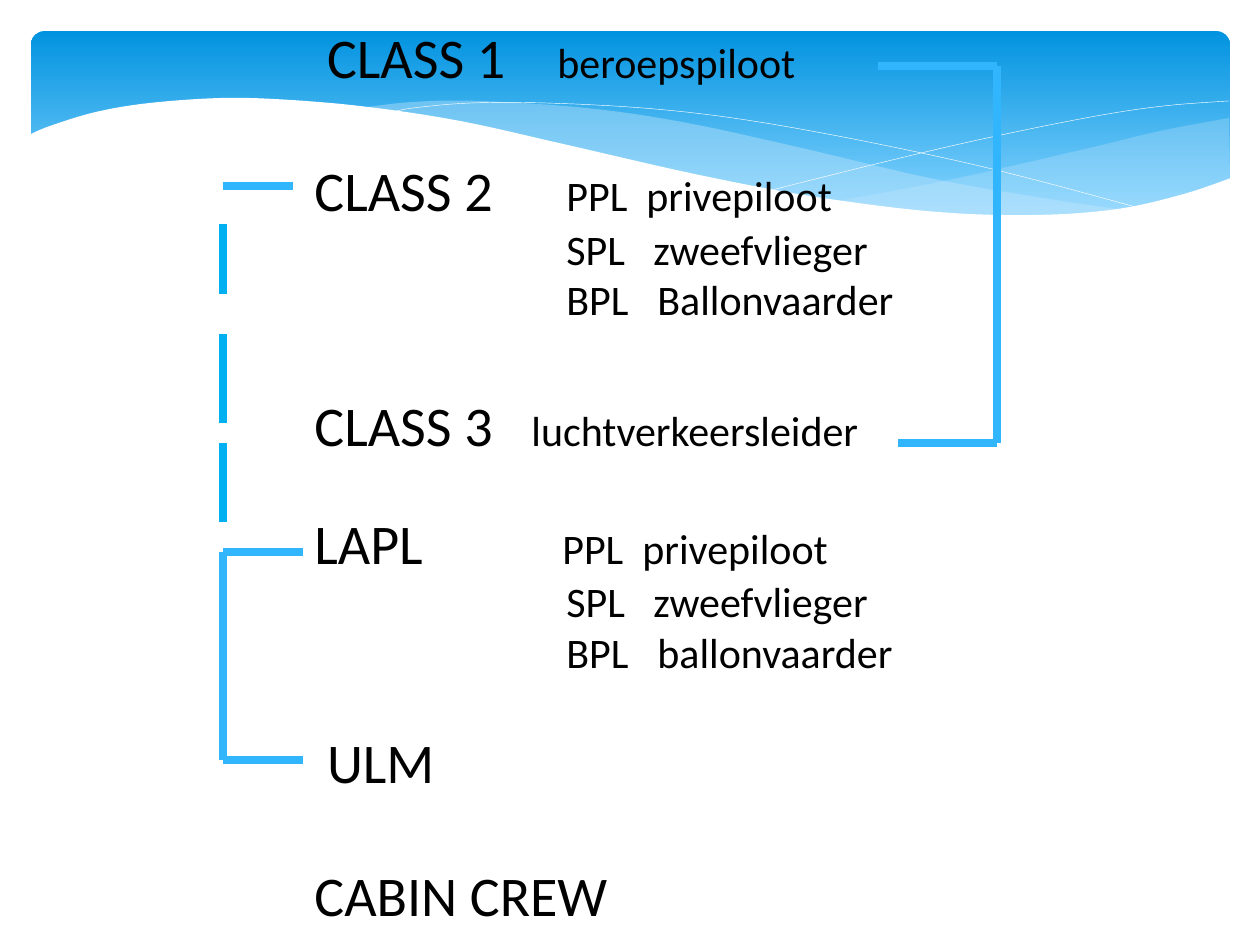
"""Build the slide that groups pilot licences by medical class."""
from dataclasses import dataclass
from typing import Any

from lxml.etree import SubElement
from pptx import Presentation
from pptx.dml.color import RGBColor
from pptx.enum.shapes import MSO_CONNECTOR as Connector, MSO_SHAPE as Shape
from pptx.enum.text import MSO_ANCHOR as Anchor
from pptx.oxml.ns import qn
from pptx.util import Emu, Pt

BLACK = RGBColor(0x00, 0x00, 0x00)
WHITE = RGBColor(0xFF, 0xFF, 0xFF)
DEEP_BLUE = RGBColor(0x02, 0x93, 0xE0)
LIGHT_BLUE = RGBColor(0x83, 0xD3, 0xFE)
PALE_BLUE = RGBColor(0xC6, 0xE7, 0xFC)
BRACKET_BLUE = RGBColor(0x31, 0xB6, 0xFD)
DASH_BLUE = RGBColor(0x00, 0xB0, 0xF0)

RIGHT_WAVE = [
    [(1229, 118), (1160, 131), (1085, 149), (949, 180), (833, 202)],
    [(833, 202), (922, 212), (998, 217), (1063, 215), (1130, 208), (1187, 194), (1230, 178)],
]
MIDDLE_WAVE = [
    [(1125, 210), (1055, 200), (934, 179), (793, 146), (682, 122), (586, 108),
     (479, 101), (413, 102), (360, 108)],
    [(360, 108), (456, 122), (566, 146), (713, 180), (819, 199), (910, 212),
     (1003, 218), (1068, 217), (1125, 210)],
]
FALLING_CURVE = [[(389, 113), (413, 108), (471, 103), (546, 103), (643, 108), (733, 118),
                  (838, 136), (958, 161), (1047, 183), (1143, 209)]]
RISING_CURVE = [[(772, 190), (876, 164), (978, 140), (1091, 117), (1164, 106), (1229, 101)]]
WHITE_WAVE = [
    [(1231, 178), (1184, 194), (1118, 209), (1037, 215), (937, 212), (816, 197),
     (699, 175), (563, 144), (460, 121), (368, 107), (290, 100), (223, 98),
     (150, 103), (96, 112), (50, 126), (29, 135)],
    [(29, 135), (29, 282)],
    [(29, 282), (1231, 282)],
]

LICENCE_ROWS = [
    (0, " CLASS 1", [(243, "beroepspiloot")]),
    (32, "CLASS 2", [(252, "PPL"), (332, "privepiloot")]),
    (0, "", [(252, "SPL"), (339, "zweefvlieger")]),
    (0, "", [(252, "BPL"), (343, "Ballonvaarder")]),
    (32, "CLASS 3", [(217, "luchtverkeersleider")]),
    (24, "LAPL", [(248, "PPL"), (328, "privepiloot")]),
    (0, "", [(252, "SPL"), (339, "zweefvlieger")]),
    (0, "", [(252, "BPL"), (343, "ballonvaarder")]),
    (24, " ULM", []),
    (32, "CABIN CREW", []),
]

BRACKET_LINES = [
    (997, 66, 997, 443), (997, 66, 878, 66), (997, 443, 898, 443),
    (223, 186, 293, 186), (223, 552, 303, 552), (223, 760, 303, 760),
    (223, 552, 223, 760),
]
DASHES = [(224, 294), (334, 423), (443, 522)]


def px(length):
    """Turn pixels into EMU."""
    return Emu(round(length * 914400 / 126))


def smooth(knots, steps=6):
    """Return points on a Catmull-Rom curve through the knots."""
    padded = [knots[0], *knots, knots[-1]]
    points = [knots[0]]
    for a, b, c, d in zip(padded, padded[1:], padded[2:], padded[3:]):
        for step in range(1, steps + 1):
            t = step / steps
            points.append(tuple(
                (2 * q + (r - p) * t + (2 * p - 5 * q + 4 * r - s) * t ** 2
                 + (3 * q - p - 3 * r + s) * t ** 3) / 2
                for p, q, r, s in zip(a, b, c, d)))
    return points


@dataclass
class SlideBuilder:
    """Holds the style and the current slide."""
    slide: Any
    font: str = "Calibri"
    heading_size: int = 32
    detail_size: int = 24
    line_spacing: float = 1.2
    line_width: float = 4.5

    def banner(self, left, top, width, height):
        """Add the rounded gradient banner."""
        shape = self.slide.shapes.add_shape(
            Shape.ROUNDED_RECTANGLE, px(left), px(top), px(width), px(height))
        shape.adjustments[0] = 0.07
        shape.shadow.inherit = False
        shape.line.fill.background()
        shape.fill.gradient()
        shape.fill.gradient_angle = 270
        stops = zip(shape.fill.gradient_stops, (0, 0.9), (DEEP_BLUE, LIGHT_BLUE))
        for stop, position, color in stops:
            stop.position = position
            stop.color.rgb = color

    def outline(self, edges, closed):
        """Add a freeform that runs smoothly along each edge."""
        points = [(px(x), px(y)) for edge in edges for x, y in smooth(edge)]
        builder = self.slide.shapes.build_freeform(*points[0])
        builder.add_line_segments(points[1:], close=closed)
        shape = builder.convert_to_shape()
        shape.shadow.inherit = False
        return shape

    def wave(self, edges, color, opacity=100):
        """Add a filled wave."""
        shape = self.outline(edges, True)
        shape.line.fill.background()
        shape.fill.solid()
        shape.fill.fore_color.rgb = color
        if opacity < 100:
            color_element = shape.element.spPr.find(".//" + qn("a:srgbClr"))
            SubElement(color_element, qn("a:alpha"), val=str(opacity * 1000))

    def curve(self, edges):
        """Add a thin white curve."""
        shape = self.outline(edges, False)
        shape.fill.background()
        shape.line.color.rgb = WHITE
        shape.line.width = Pt(0.25)

    def line(self, start_x, start_y, end_x, end_y, color):
        """Add a thick straight line."""
        connector = self.slide.shapes.add_connector(
            Connector.STRAIGHT, px(start_x), px(start_y), px(end_x), px(end_y))
        connector.line.color.rgb = color
        connector.line.width = Pt(self.line_width)
        SubElement(connector.element.spPr, qn("a:effectLst"))

    def run(self, paragraph, text, size):
        """Add one formatted run."""
        run = paragraph.add_run()
        run.text = text
        run.font.name = self.font
        run.font.size = Pt(size)
        run.font.color.rgb = BLACK

    def licence_list(self, left, top, width, height, rows):
        """Add the list of classes with tabbed details."""
        box = self.slide.shapes.add_textbox(px(left), px(top), px(width), px(height))
        text_frame = box.text_frame
        text_frame.word_wrap = True
        text_frame.vertical_anchor = Anchor.TOP
        for index, (gap, heading, details) in enumerate(rows):
            paragraph = text_frame.add_paragraph() if index else text_frame.paragraphs[0]
            if details:
                properties = paragraph._p.get_or_add_pPr()
                tabs = SubElement(properties, qn("a:tabLst"))
                for position, _ in details:
                    SubElement(tabs, qn("a:tab"), pos=str(px(position)), algn="l")
            if gap:
                paragraph.space_before = Pt(round(gap * self.line_spacing))
            if heading:
                self.run(paragraph, heading, self.heading_size)
            for _, text in details:
                self.run(paragraph, "\t" + text, self.detail_size)


def main():
    """Build and save the presentation."""
    presentation = Presentation()
    presentation.slide_width, presentation.slide_height = px(1260), px(945)
    builder = SlideBuilder(presentation.slides.add_slide(presentation.slide_layouts[6]))
    builder.banner(31, 31, 1199, 197)
    builder.wave(RIGHT_WAVE, PALE_BLUE, 29)
    builder.wave(MIDDLE_WAVE, PALE_BLUE, 40)
    builder.curve(FALLING_CURVE)
    builder.curve(RISING_CURVE)
    builder.wave(WHITE_WAVE, WHITE)
    builder.licence_list(302, 16, 851, 929, LICENCE_ROWS)
    for ends in BRACKET_LINES:
        builder.line(*ends, BRACKET_BLUE)
    for top, bottom in DASHES:
        builder.line(223, top, 223, bottom, DASH_BLUE)
    presentation.save("out.pptx")


if __name__ == "__main__":
    main()
